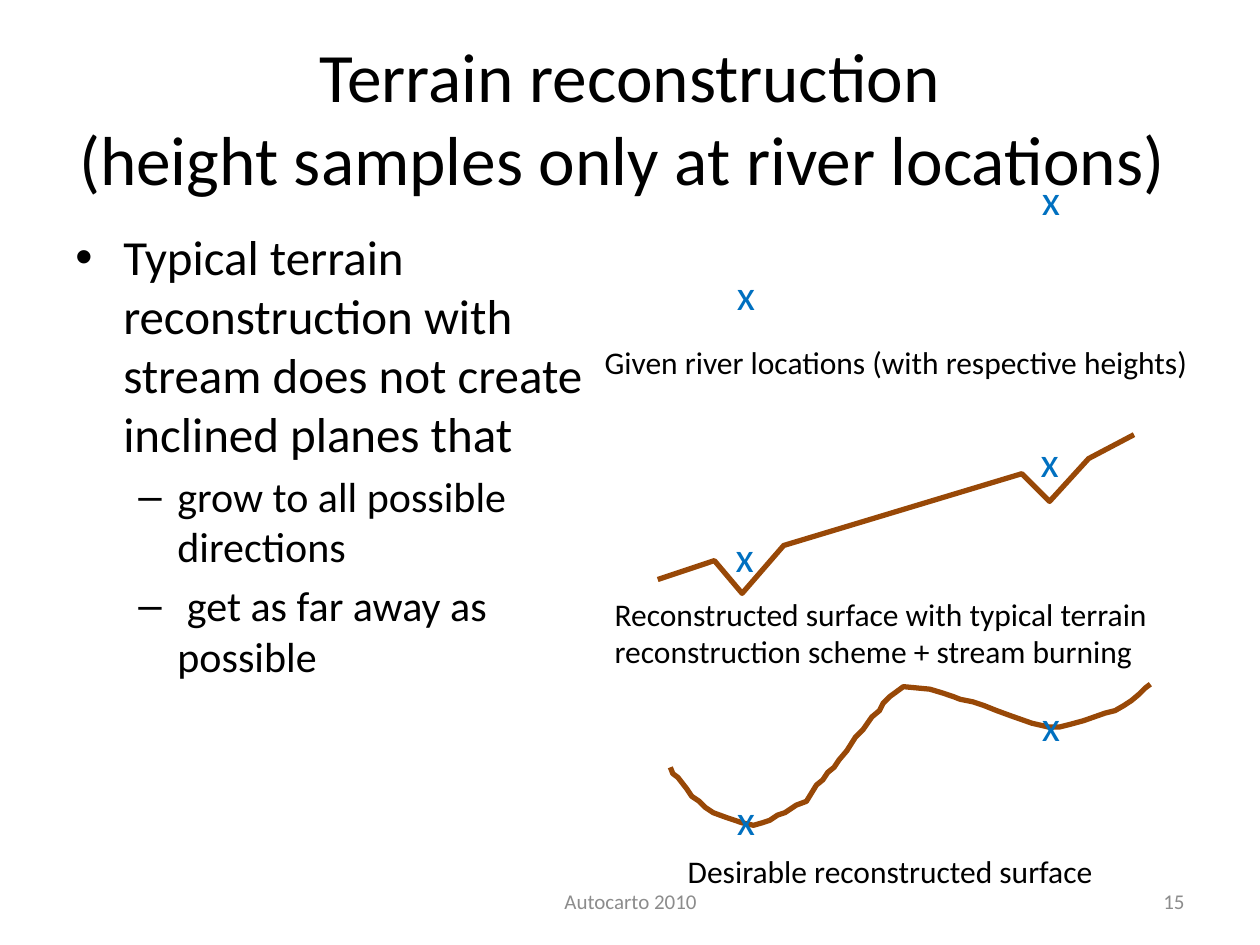
import dataclasses

import lxml.etree
import pptx
import pptx.dml.color
import pptx.enum.text
import pptx.oxml.ns
import pptx.util

PX = 9144  # EMU per px, 100 px to the inch
COLORS = {"text": "000000", "river": "0070C0", "terrain": "984807", "footer": "8C8C8C"}
ALIGN = pptx.enum.text.PP_ALIGN
ANCHOR = pptx.enum.text.MSO_ANCHOR


@dataclasses.dataclass(frozen=True)
class Item:
    text: str
    size: float
    bullet: str = ""
    margin: int = 0
    hanging: int = 0


@dataclasses.dataclass(frozen=True)
class Label:
    left: int
    top: int
    width: int
    height: int
    items: tuple[Item, ...]
    color: str = "text"
    align: ALIGN = ALIGN.LEFT
    anchor: ANCHOR = ANCHOR.TOP
    wrap: bool = True


def rgb(name: str) -> pptx.dml.color.RGBColor:
    return pptx.dml.color.RGBColor.from_string(COLORS[name])


def set_all(target: object, values: dict) -> None:
    for name, value in values.items():
        setattr(target, name, value)


def add_bullet(para, item: Item) -> None:
    properties = para._p.get_or_add_pPr()
    properties.set("marL", str(item.margin * PX))
    properties.set("indent", str(-item.hanging * PX))
    for tag, key, value in (("a:buFont", "typeface", "Arial"), ("a:buChar", "char", item.bullet)):
        element = lxml.etree.SubElement(properties, pptx.oxml.ns.qn(tag))
        element.set(key, value)


def draw_label(page, label: Label) -> None:
    box = page.shapes.add_textbox(
        *(value * PX for value in (label.left, label.top, label.width, label.height)))
    frame = box.text_frame
    set_all(frame, {"word_wrap": label.wrap, "vertical_anchor": label.anchor})
    for index, item in enumerate(label.items):
        para = frame.add_paragraph() if index else frame.paragraphs[0]
        para.text = item.text
        para.alignment = label.align
        if item.bullet:
            para.space_before = pptx.util.Pt(item.size * 0.2)
            add_bullet(para, item)
        for span in para.runs:
            set_all(span.font, {"name": "Calibri", "size": pptx.util.Pt(item.size)})
            span.font.color.rgb = rgb(label.color)


def draw_profile(page, points: list[tuple[int, int]]) -> None:
    builder = page.shapes.build_freeform(*points[0], scale=PX)
    builder.add_line_segments(points[1:], close=False)
    shape = builder.convert_to_shape()
    shape.shadow.inherit = False
    shape.fill.background()
    shape.line.color.rgb = rgb("terrain")
    shape.line.width = pptx.util.Pt(3)


# Title, bullets, captions and footer
LABELS = [
    Label(50, 30, 900, 125,
          (Item("Terrain reconstruction\v(height samples only at river locations) ", 39.6),),
          align=ALIGN.CENTER, anchor=ANCHOR.MIDDLE),
    Label(50, 175, 442, 495, (
        Item("Typical terrain reconstruction with stream does not create inclined planes that",
             28, "•", 38, 38),
        Item("grow to all possible directions", 24, "–", 81, 31),
        Item(" get as far away as possible", 24, "–", 81, 31))),
    Label(470, 267, 489, 40,
          (Item("Given river locations (with respective heights)", 18),), wrap=False),
    Label(478, 467, 458, 71, (Item("Reconstructed surface with typical terrain "
                                   "reconstruction scheme + stream burning", 18),)),
    Label(536, 671, 355, 40, (Item("Desirable reconstructed surface", 18),)),
    Label(717, 695, 233, 40, (Item("15", 12),), "footer", ALIGN.RIGHT, ANCHOR.MIDDLE),
    Label(342, 695, 317, 40, (Item("Autocarto 2010", 12),), "footer",
          ALIGN.CENTER, ANCHOR.MIDDLE),
]

# Terrain cross-sections
BURNED = [(522, 460), (567, 445), (589, 471), (622, 433),
          (811, 376), (833, 398), (864, 364), (900, 345)]
DESIRABLE = [
    (532, 609), (534, 614), (538, 617), (545, 626), (549, 632), (555, 636), (560, 641),
    (566, 645), (577, 649), (589, 653), (598, 655), (605, 653), (611, 651), (617, 647),
    (623, 645), (632, 639), (640, 636), (648, 623), (653, 619), (657, 613), (662, 609),
    (666, 603), (672, 596), (679, 585), (685, 579), (692, 569), (698, 564), (701, 558),
    (706, 553), (717, 545), (738, 547), (748, 550), (757, 553), (762, 555), (772, 557),
    (781, 560), (791, 564), (802, 568), (819, 574), (832, 577), (841, 577), (849, 575),
    (860, 572), (877, 566), (885, 564), (892, 560), (898, 556), (904, 551), (909, 546),
    (913, 543),
]

# Each river pair: left x, then right x a fixed step away and higher
RIVER_PAIRS = [(575, 208), (574, 416), (575, 625)]
RIVER_STEP = (242, -75)


def main() -> None:
    deck = pptx.Presentation()
    set_all(deck, {"slide_width": 1000 * PX, "slide_height": 750 * PX})
    page = deck.slides.add_slide(deck.slide_layouts[6])
    for profile in (DESIRABLE, BURNED):
        draw_profile(page, profile)
    for label in LABELS:
        draw_label(page, label)
    for left, top in RIVER_PAIRS:
        for step in (0, 1):
            draw_label(page, Label(left + step * RIVER_STEP[0], top + step * RIVER_STEP[1],
                                   35, 50, (Item("x", 24),), "river", wrap=False))
    deck.save("out.pptx")


if __name__ == "__main__":
    main()
